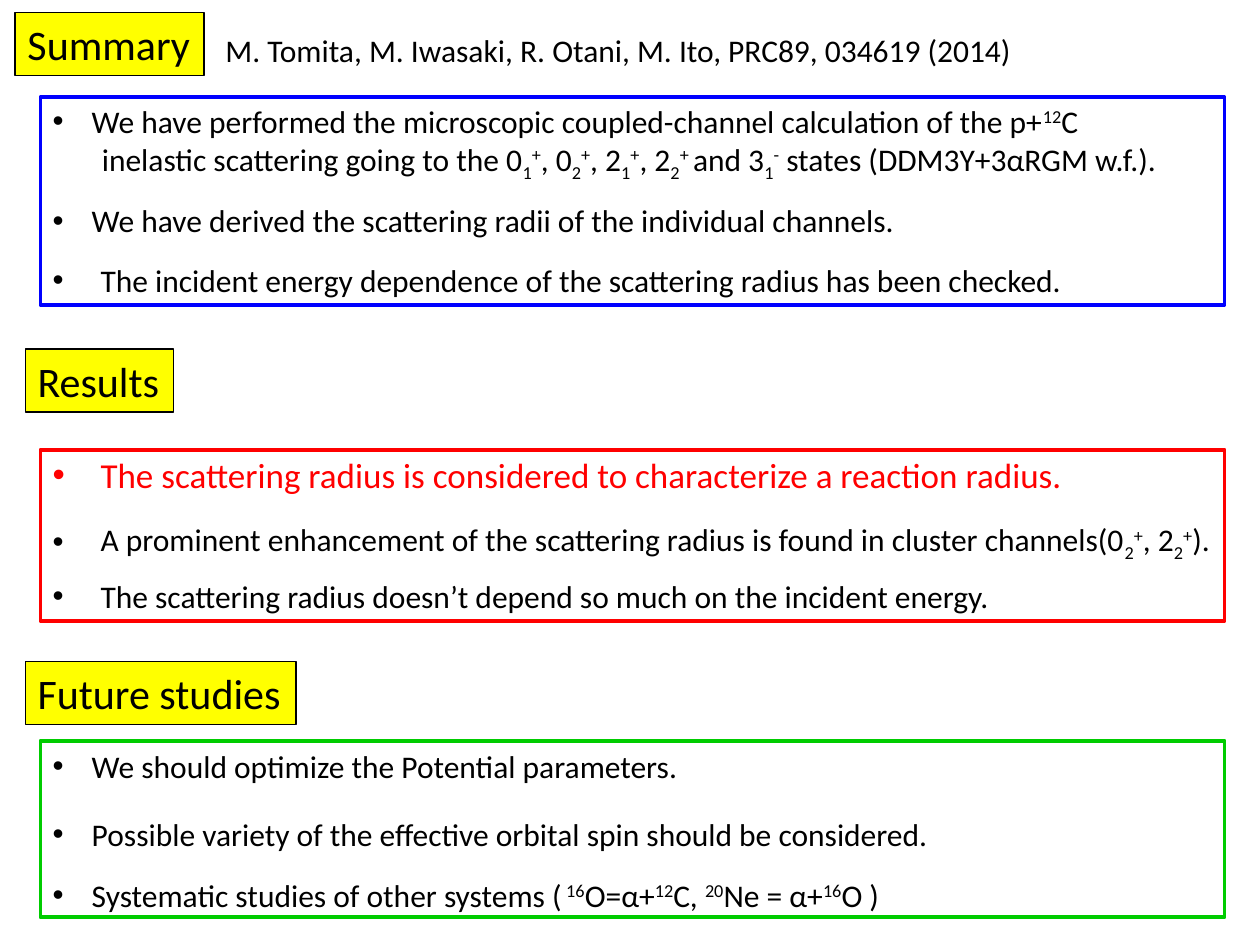
from dataclasses import dataclass

from lxml import etree
from pptx import Presentation
from pptx.dml.color import RGBColor
from pptx.enum.shapes import MSO_SHAPE
from pptx.enum.text import MSO_ANCHOR, PP_ALIGN
from pptx.oxml.ns import qn
from pptx.slide import Slide
from pptx.util import Inches, Pt

RECTANGLE = MSO_SHAPE.RECTANGLE
TOP = MSO_ANCHOR.TOP
LEFT = PP_ALIGN.LEFT
BASELINES = {"^": "30000", "_": "-25000"}
PANEL_LEFT, PANEL_WIDTH = 0.32, 9.4
LINE_HEIGHT = 0.4

HEADINGS = [
    ("Summary", 0.12, 0.1, 1.5),
    ("Results", 0.2, 2.77, 1.18),
    ("Future studies", 0.2, 5.25, 2.15),
]

PANELS = [
    (0.77, 1.65, "0000FF", [
        (0.76, 0.31, ["We have performed the microscopic coupled-channel calculation of the p+|^12|C",
                      "inelastic scattering going to the 0|_1|^+|, 0|_2|^+|, 2|_1|^+|, 2|_2|^+ |and 3|_1|^-"
                      "| states (DDM3Y+3αRGM w.f.)."]),
        (1.55, 0.31, ["We have derived the scattering radii of the individual channels."]),
        (2.02, 0.38, ["The incident energy dependence of the scattering radius has been checked."]),
    ]),
    (3.57, 1.36, "FF0000", [
        (3.55, 0.38, ["The scattering radius is considered to characterize a reaction radius."], 20, "FF0000"),
        (4.08, 0.38, ["A prominent enhancement of the scattering radius is found in cluster channels"
                      "(0|_2|^+|, 2|_2|^+|)."]),
        (4.53, 0.38, ["The scattering radius doesn’t depend so much on the incident energy."]),
    ]),
    (5.88, 1.4, "00CC00", [
        (5.88, 0.31, ["We should optimize the Potential parameters."]),
        (6.42, 0.31, ["Possible variety of the effective orbital spin should be considered."]),
        (6.9, 0.31, ["Systematic studies of other systems (|^ 16|O=α+|^12|C, |^20|Ne = α+|^16|O )"]),
    ]),
]


def rgb(value):
    return RGBColor.from_string(value)


@dataclass
class SlideBuilder:
    slide: Slide
    font_name: str = "Calibri"
    text_color: str = "000000"
    heading_fill: str = "FFFF00"
    text_size: int = 18
    heading_size: int = 24
    continuation_indent: float = 0.39

    def box(self, left, top, width, height, line_color, line_width, fill=None):
        shape = self.slide.shapes.add_shape(
            RECTANGLE, Inches(left), Inches(top), Inches(width), Inches(height))
        shape.shadow.inherit = False
        if fill:
            shape.fill.solid()
            shape.fill.fore_color.rgb = rgb(fill)
        else:
            shape.fill.background()
        shape.line.color.rgb = rgb(line_color)
        shape.line.width = Pt(line_width)
        return shape

    def set_text(self, paragraph, text, size, color):
        paragraph.alignment = LEFT
        paragraph.font.name = self.font_name
        paragraph.font.size = Pt(size)
        paragraph.font.color.rgb = rgb(color)
        for part in text.split("|"):
            run = paragraph.add_run()
            baseline = BASELINES.get(part[0])
            run.text = part[1:] if baseline else part
            if baseline:
                run._r.get_or_add_rPr().set("baseline", baseline)

    def heading(self, text, left, top, width):
        shape = self.box(left, top, width, 0.5, self.text_color, 0.75, self.heading_fill)
        frame = shape.text_frame
        frame.word_wrap = False
        frame.vertical_anchor = TOP
        self.set_text(frame.paragraphs[0], text, self.heading_size, self.text_color)

    def text_frame(self, left, top, width, height):
        shape = self.slide.shapes.add_textbox(
            Inches(left), Inches(top), Inches(width), Inches(height))
        shape.text_frame.word_wrap = True
        return shape.text_frame

    def label(self, text, left, top, width):
        frame = self.text_frame(left, top, width, LINE_HEIGHT)
        self.set_text(frame.paragraphs[0], text, self.text_size, self.text_color)

    def bullet(self, top, indent, lines, size=None, color=None):
        frame = self.text_frame(PANEL_LEFT, top, PANEL_WIDTH, LINE_HEIGHT * len(lines))
        for index, line in enumerate(lines):
            paragraph = frame.add_paragraph() if index else frame.paragraphs[0]
            properties = paragraph._p.get_or_add_pPr()
            if index:
                properties.set("marL", str(Inches(self.continuation_indent)))
            else:
                properties.set("marL", str(Inches(indent)))
                properties.set("indent", str(-Inches(indent)))
                etree.SubElement(properties, qn("a:buFont"), typeface="Arial")
                etree.SubElement(properties, qn("a:buChar"), char="•")
            self.set_text(paragraph, line, size or self.text_size, color or self.text_color)

    def panel(self, top, height, color, bullets):
        self.box(PANEL_LEFT, top, PANEL_WIDTH, height, color, 2)
        for bullet in bullets:
            self.bullet(*bullet)


def main():
    presentation = Presentation()
    presentation.slide_width = Inches(10)
    presentation.slide_height = Inches(7.5)
    builder = SlideBuilder(presentation.slides.add_slide(presentation.slide_layouts[6]))
    for heading in HEADINGS:
        builder.heading(*heading)
    builder.label("M. Tomita, M. Iwasaki, R. Otani, M. Ito, PRC89, 034619 (2014)", 1.69, 0.2, 7.48)
    for panel in PANELS:
        builder.panel(*panel)
    presentation.save("out.pptx")


if __name__ == "__main__":
    main()
